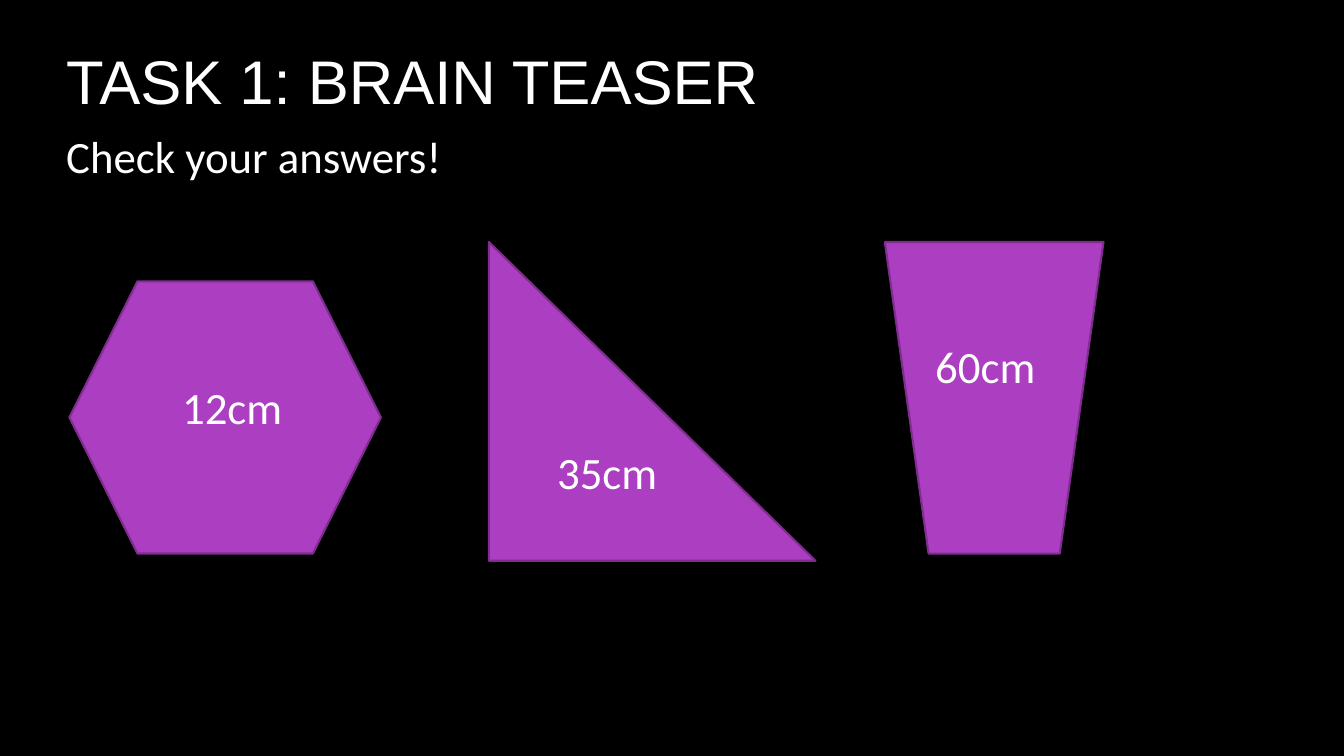
from pptx import Presentation
from pptx.dml.color import RGBColor as RGB
from pptx.enum.shapes import MSO_SHAPE as Kind
from pptx.enum.text import MSO_ANCHOR as Anchor, MSO_AUTO_SIZE as Fit
from pptx.util import Cm, Pt

HUES = {"back": "000000", "text": "FFFFFF", "fill": "AC3EC1", "edge": "7F2E8F"}
HEAD = {"name": "Arial", "size": Pt(44)}
BODY = {"name": "Calibri", "size": Pt(32)}
TOP = {"word_wrap": True, "vertical_anchor": Anchor.TOP}
MID = {"word_wrap": True, "vertical_anchor": Anchor.MIDDLE}
GROW = {**TOP, "auto_size": Fit.SHAPE_TO_FIT_TEXT}
SHAPES = [
    (Kind.HEXAGON, (1.75, 7.09, 7.85, 6.86)),
    (Kind.RIGHT_TRIANGLE, (12.32, 6.1, 8.23, 8.03)),
    (Kind.FLOWCHART_MANUAL_OPERATION, (22.3, 6.1, 5.51, 7.85)),
]
LABELS = [
    ("12cm", (4.34, 9.45, 3.73, 1.63)),
    ("35cm", (13.79, 11.07, 5.28, 1.63)),
    ("60cm", (23.32, 8.41, 4.52, 1.63)),
]


def hue(key):
    """Return the named colour."""
    return RGB.from_string(HUES[key])


def style(item, form):
    """Set each format value on an object."""
    for key, value in form.items():
        setattr(item, key, value)


def add_text(slide, text, box, font, form):
    """Add one line of white text in a box."""
    frame = slide.shapes.add_textbox(*map(Cm, box)).text_frame
    style(frame, form)
    line = frame.paragraphs[0]
    run = line.add_run()
    run.text = text
    style(run.font, font)
    run.font.color.rgb = hue("text")
    return line


def add_form(slide, kind, box):
    """Add a purple shape with a darker edge."""
    shape = slide.shapes.add_shape(kind, *map(Cm, box))
    shape.shadow.inherit = False
    shape.fill.solid()
    shape.fill.fore_color.rgb = hue("fill")
    shape.line.color.rgb = hue("edge")
    shape.line.width = Pt(1.5)


def main():
    """Build and save the slide."""
    deck = Presentation()
    style(deck, {"slide_width": Cm(33.87), "slide_height": Cm(19.05)})
    slide = deck.slides.add_slide(deck.slide_layouts[6])
    back = slide.background.fill
    back.solid()
    back.fore_color.rgb = hue("back")
    add_text(slide, "TASK 1: BRAIN TEASER", (1.42, 0, 28.14, 4.04), HEAD, MID)
    line = add_text(slide, "Check your answers!", (1.42, 3.12, 28.14, 12.65), BODY, TOP)
    line.space_after = Pt(10)
    for kind, box in SHAPES:
        add_form(slide, kind, box)
    for text, box in LABELS:
        add_text(slide, text, box, BODY, GROW)
    deck.save("out.pptx")


if __name__ == "__main__":
    main()
